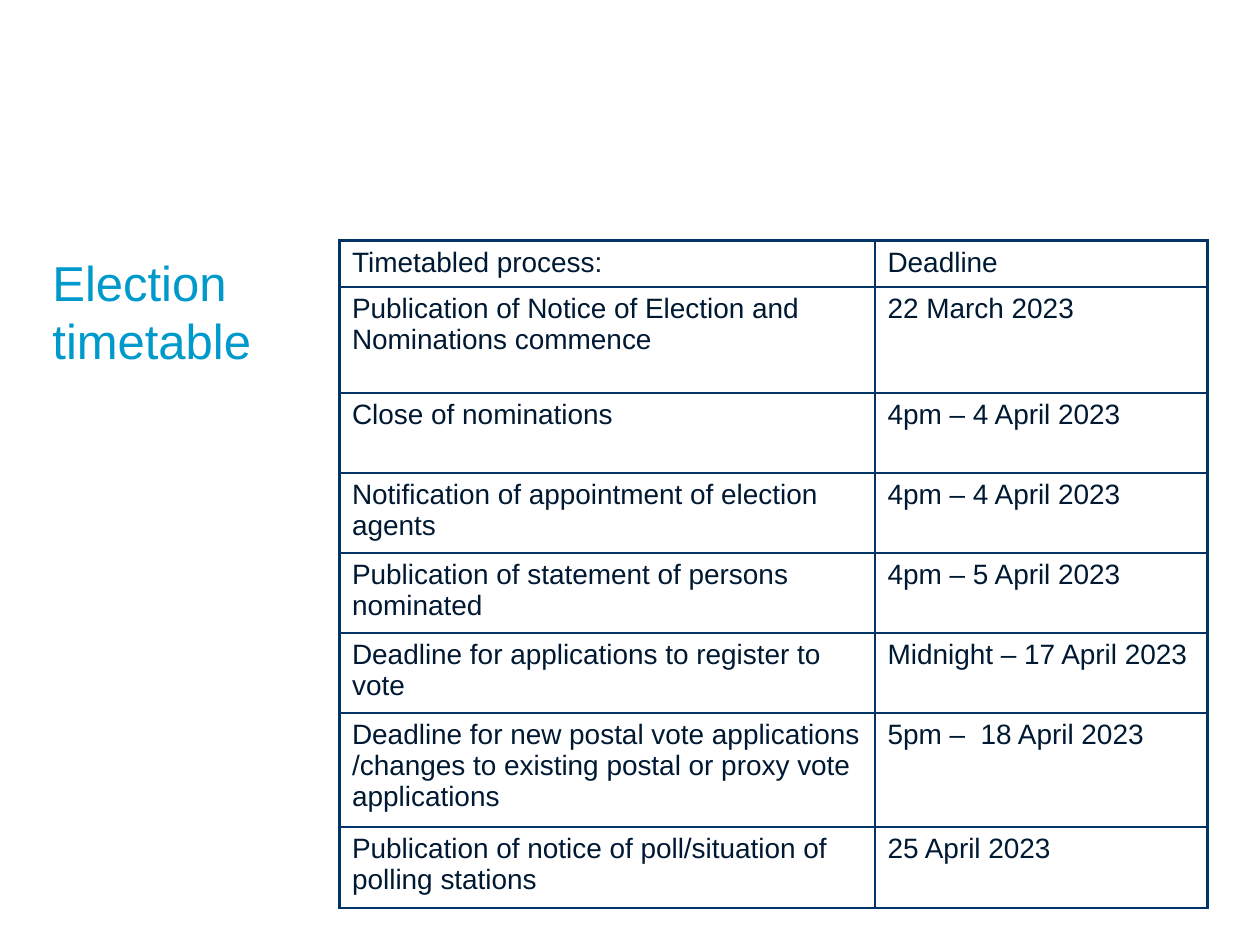
from dataclasses import dataclass

import pptx
import pptx.dml.color
import pptx.enum.text
import pptx.oxml
import pptx.oxml.ns
import pptx.util

Pt = pptx.util.Pt


@dataclass(frozen=True)
class Theme:
    """Colours, font and type sizes of the deck."""
    font: str = "Arial"
    title_color: str = "0099CC"
    text_color: str = "001933"
    border_color: str = "003366"
    cell_color: str = "FFFFFF"
    title_size: float = 28
    cell_size: float = 16
    outer_line: float = 2.25
    inner_line: float = 1


THEME = Theme()
COLUMN_WIDTHS = (306, 190)
TIMETABLE = (
    (24.6, "Timetabled process:", "Deadline"),
    (60.6, "Publication of Notice of Election and Nominations commence", "22 March 2023"),
    (45.7, "Close of nominations", "4pm – 4 April 2023"),
    (45.7, "Notification of appointment of election agents", "4pm – 4 April 2023"),
    (45.7, "Publication of statement of persons nominated", "4pm – 5 April 2023"),
    (45.7, "Deadline for applications to register to vote", "Midnight – 17 April 2023"),
    (65.1, "Deadline for new postal vote applications /changes to existing "
           "postal or proxy vote applications", "5pm –  18 April 2023"),
    (46.3, "Publication of notice of poll/situation of polling stations", "25 April 2023"),
)


def rgb(color):
    """Return a colour object for a hex string."""
    return pptx.dml.color.RGBColor.from_string(color)


def set_all(target, values):
    """Set each named attribute of the target."""
    for name, value in values.items():
        setattr(target, name, value)


def write_text(frame, text, size, color, margins):
    """Fill a text frame with one styled paragraph."""
    horizontal, vertical = margins
    set_all(frame, {
        "word_wrap": True,
        "vertical_anchor": pptx.enum.text.MSO_ANCHOR.TOP,
        "margin_left": Pt(horizontal),
        "margin_right": Pt(horizontal),
        "margin_top": Pt(vertical),
        "margin_bottom": Pt(vertical),
    })
    para = frame.paragraphs[0]
    span = para.add_run()
    span.text = text
    set_all(span.font, {"name": THEME.font, "size": Pt(size)})
    span.font.color.rgb = rgb(color)


def set_borders(cell, widths):
    """Draw the cell's borders from a dict of side to width."""
    properties = cell._tc.get_or_add_tcPr()
    for position, (side, width) in enumerate(widths.items()):
        properties.insert(position, pptx.oxml.parse_xml(
            f'<a:ln{side} {pptx.oxml.ns.nsdecls("a")} w="{Pt(width)}">'
            f'<a:solidFill><a:srgbClr val="{THEME.border_color}"/></a:solidFill>'
            f'</a:ln{side}>'))


def add_title(page, left, top, width, height):
    """Place the slide title in the given box."""
    box = page.shapes.add_textbox(Pt(left), Pt(top), Pt(width), Pt(height))
    write_text(box.text_frame, "Election timetable", THEME.title_size,
               THEME.title_color, (0, 0))


def add_timetable(page, left, top, width, height):
    """Place the table of deadlines in the given box."""
    table = page.shapes.add_table(len(TIMETABLE), len(COLUMN_WIDTHS), Pt(left),
                                  Pt(top), Pt(width), Pt(height)).table
    set_all(table, {"first_row": False, "horz_banding": False})
    for column, share in zip(table.columns, COLUMN_WIDTHS):
        column.width = Pt(width * share / sum(COLUMN_WIDTHS))
    total = sum(row[0] for row in TIMETABLE)
    last = len(COLUMN_WIDTHS) - 1
    for row, (share, *texts) in enumerate(TIMETABLE):
        table.rows[row].height = Pt(height * share / total)
        for column, text in enumerate(texts):
            cell = table.cell(row, column)
            write_text(cell.text_frame, text, THEME.cell_size, THEME.text_color, (0, 0))
            set_all(cell, {"margin_left": Pt(7.2), "margin_right": Pt(7.2),
                           "margin_top": Pt(3.6), "margin_bottom": Pt(3.6)})
            cell.fill.solid()
            cell.fill.fore_color.rgb = rgb(THEME.cell_color)
            outer = {"L": column == 0, "R": column == last, "T": row == 0, "B": False}
            set_borders(cell, {side: THEME.outer_line if edge else THEME.inner_line
                               for side, edge in outer.items()})


def main():
    """Build the deck and save it."""
    deck = pptx.Presentation()
    set_all(deck, {"slide_width": Pt(720), "slide_height": Pt(540)})
    page = deck.slides.add_slide(deck.slide_layouts[6])
    add_title(page, 30, 144, 198, 336)
    add_timetable(page, 194, 137.6, 496, 379.4)
    deck.save("out.pptx")


if __name__ == "__main__":
    main()
